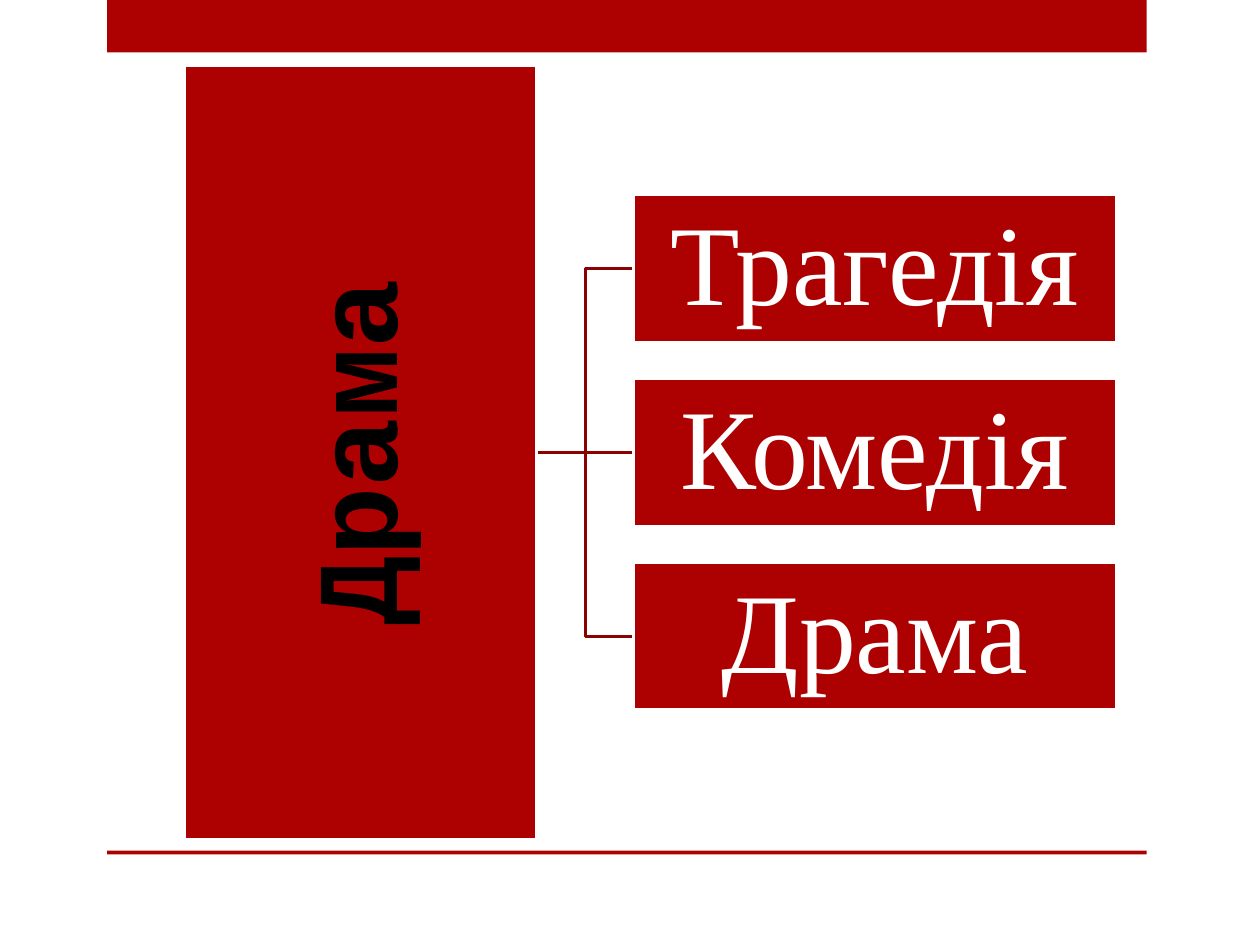
from lxml import etree
from pptx import Presentation
from pptx.dml.color import RGBColor
from pptx.enum.shapes import MSO_CONNECTOR, MSO_SHAPE
from pptx.enum.text import MSO_ANCHOR, PP_ALIGN
from pptx.oxml.ns import qn
from pptx.util import Pt

RECTANGLE = MSO_SHAPE.RECTANGLE
STRAIGHT = MSO_CONNECTOR.STRAIGHT
MIDDLE = MSO_ANCHOR.MIDDLE
CENTER = PP_ALIGN.CENTER

RED = RGBColor(0xAD, 0x01, 0x01)
DARK_RED = RGBColor(0x8B, 0x01, 0x01)
WHITE = RGBColor(0xFF, 0xFF, 0xFF)
BLACK = RGBColor(0x00, 0x00, 0x00)

GENUS = "Драма"
GENRES = ["Трагедія", "Комедія", "Драма"]

# left, top, width, height
BANDS = [(61.2, 0, 594, 30), (61.2, 486, 594, 2.3)]

AXIS_Y = 258.6
GENUS_CENTER_X = 206
GENUS_LENGTH, GENUS_THICKNESS = 442, 201.4
GENRE_LEFT, GENRE_WIDTH, GENRE_HEIGHT = 362, 275.8, 84.2
GENRE_PITCH = 105.1
BRANCH_LEFT = GENUS_CENTER_X + GENUS_THICKNESS / 2
BRANCH_BEND = (BRANCH_LEFT + GENRE_LEFT) / 2
LINE_WIDTH = 1.75


def add_block(slide, left, top, width, height):
    block = slide.shapes.add_shape(RECTANGLE, Pt(left), Pt(top), Pt(width), Pt(height))
    block.shadow.inherit = False
    block.fill.solid()
    block.fill.fore_color.rgb = RED
    block.line.fill.background()
    return block


def add_node(slide, label, center_x, center_y, width, height, font, size, color, bold=False):
    node = add_block(slide, center_x - width / 2, center_y - height / 2, width, height)
    node.line.color.rgb = WHITE
    node.line.width = Pt(LINE_WIDTH)
    frame = node.text_frame
    frame.text = label
    frame.word_wrap = True
    frame.vertical_anchor = MIDDLE
    frame.margin_left = frame.margin_right = Pt(3.6)
    frame.margin_top = frame.margin_bottom = Pt(3.6)
    paragraph = frame.paragraphs[0]
    paragraph.alignment = CENTER
    paragraph.line_spacing = 0.9
    run_font = paragraph.runs[0].font
    run_font.name, run_font.size, run_font.bold = font, Pt(size), bold
    run_font.color.rgb = color
    return node


def add_branch(slide, genre_y):
    """Join the genus to a genre: straight on the axis, stepped elsewhere."""
    if genre_y == AXIS_Y:
        branch = slide.shapes.add_connector(
            STRAIGHT, Pt(BRANCH_LEFT), Pt(AXIS_Y), Pt(GENRE_LEFT), Pt(AXIS_Y))
        etree.SubElement(branch._element.spPr, qn("a:effectLst"))
    else:
        outline = slide.shapes.build_freeform(Pt(BRANCH_LEFT), Pt(AXIS_Y))
        corners = [(BRANCH_BEND, AXIS_Y), (BRANCH_BEND, genre_y), (GENRE_LEFT, genre_y)]
        outline.add_line_segments([(Pt(x), Pt(y)) for x, y in corners], close=False)
        branch = outline.convert_to_shape()
        branch.shadow.inherit = False
        branch.fill.background()
    branch.line.color.rgb = DARK_RED
    branch.line.width = Pt(LINE_WIDTH)


def main():
    deck = Presentation()
    deck.slide_width, deck.slide_height = Pt(720), Pt(540)
    slide = deck.slides.add_slide(deck.slide_layouts[6])

    for band in BANDS:
        add_block(slide, *band)

    middle = (len(GENRES) - 1) / 2
    genre_ys = [AXIS_Y + (i - middle) * GENRE_PITCH for i in range(len(GENRES))]
    for genre_y in genre_ys:
        add_branch(slide, genre_y)

    genus = add_node(slide, GENUS, GENUS_CENTER_X, AXIS_Y, GENUS_LENGTH, GENUS_THICKNESS,
                     "Courier New", 66, BLACK, bold=True)
    genus.rotation = 270

    for genre, genre_y in zip(GENRES, genre_ys):
        add_node(slide, genre, GENRE_LEFT + GENRE_WIDTH / 2, genre_y,
                 GENRE_WIDTH, GENRE_HEIGHT, "Times New Roman", 65, WHITE)

    deck.save("out.pptx")


if __name__ == "__main__":
    main()
